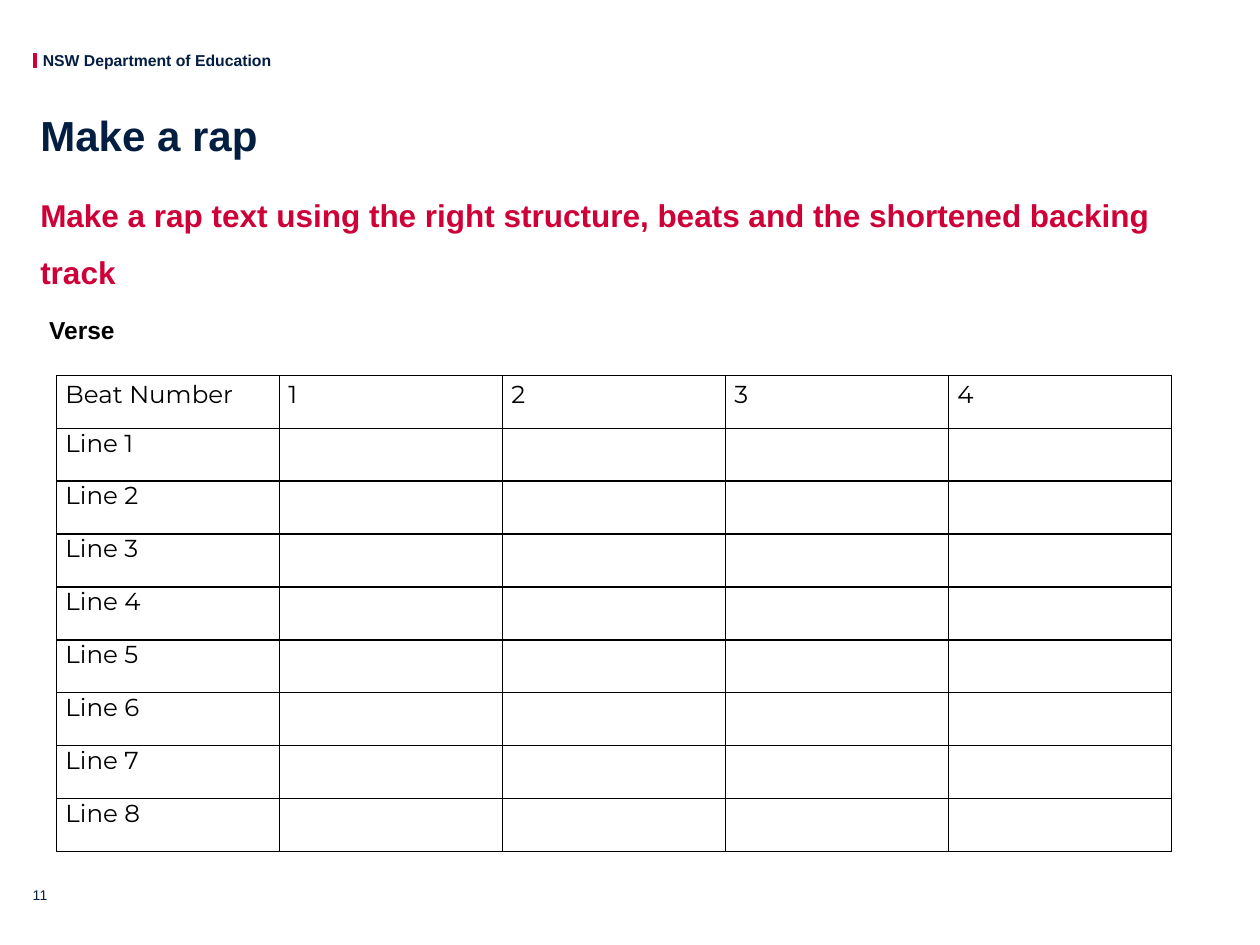
from lxml import etree
from pptx import Presentation
from pptx.dml.color import RGBColor
from pptx.enum.shapes import MSO_CONNECTOR
from pptx.enum.text import MSO_ANCHOR, MSO_AUTO_SIZE, PP_ALIGN
from pptx.oxml import parse_xml
from pptx.oxml.ns import nsdecls, qn
from pptx.util import Inches, Pt

NAVY = RGBColor(0x04, 0x1E, 0x42)
RED = RGBColor(0xCE, 0x00, 0x37)
BLACK = RGBColor(0x00, 0x00, 0x00)
STRAIGHT = MSO_CONNECTOR.STRAIGHT
TOP, MIDDLE, BOTTOM = MSO_ANCHOR.TOP, MSO_ANCHOR.MIDDLE, MSO_ANCHOR.BOTTOM
LEFT = PP_ALIGN.LEFT
NO_AUTOFIT = MSO_AUTO_SIZE.NONE

DEPARTMENT = "NSW Department of Education"
TITLE = "Make a rap"
TASK = "Make a rap text using the right structure, beats and the shortened backing track"
SECTION = "Verse"
PAGE = "11"
BEATS = 4
LINES = 8
ROWS = [["Beat Number"] + [str(n + 1) for n in range(BEATS)]]
ROWS += [[f"Line {n + 1}"] + [""] * BEATS for n in range(LINES)]

SLIDE_W, SLIDE_H = 10, 7.5
MARGIN = 0.32
TEXT_W = 9.43
TABLE_X, TABLE_Y = 0.45, 2.98
COL_W, ROW_H = 1.77, 0.42


def style(p, size, color, bold=False, font="Arial"):
    p.font.name = font
    p.font.size = Pt(size)
    p.font.bold = bold
    p.font.color.rgb = color


def fill_text(sp, text, size, color, bold=False, anchor=TOP, wrap=True, insets=(0, 0, 0, 0)):
    tf = sp.text_frame
    tf.text = text
    tf.auto_size = NO_AUTOFIT
    tf.word_wrap = wrap
    tf.vertical_anchor = anchor
    tf.margin_left, tf.margin_top, tf.margin_right, tf.margin_bottom = map(Inches, insets)
    p = tf.paragraphs[0]
    p.alignment = LEFT
    style(p, size, color, bold)
    return p


def add_text(s, box, *args, **options):
    return fill_text(s.shapes.add_textbox(*map(Inches, box)), *args, **options)


def add_borders(cell):
    tc_pr = cell._tc.get_or_add_tcPr()
    for i, side in enumerate(("lnL", "lnR", "lnT", "lnB")):
        tc_pr.insert(i, parse_xml(
            f'<a:{side} {nsdecls("a")} w="{Pt(1)}"><a:solidFill>'
            f'<a:srgbClr val="{BLACK}"/></a:solidFill></a:{side}>'))


def add_beat_table(s):
    cols = len(ROWS[0])
    box = (TABLE_X, TABLE_Y, COL_W * cols, ROW_H * len(ROWS))
    table = s.shapes.add_table(len(ROWS), cols, *map(Inches, box)).table
    table.horz_banding = False
    table.first_row = False
    for r, row in enumerate(ROWS):
        for c, text in enumerate(row):
            cell = table.cell(r, c)
            cell.text = text
            cell.margin_left = cell.margin_right = Inches(0.07)
            cell.margin_top = cell.margin_bottom = 0
            cell.fill.background()
            add_borders(cell)
            p = cell.text_frame.paragraphs[0]
            if r == 0:
                p.line_spacing = 1.15
                p.space_after = Pt(9.6)
            style(p, 14, BLACK, font="Montserrat")


def main():
    prs = Presentation()
    prs.slide_width, prs.slide_height = Inches(SLIDE_W), Inches(SLIDE_H)
    s = prs.slides.add_slide(prs.slide_layouts[5])

    bar = s.shapes.add_connector(STRAIGHT, *map(Inches, (0.28, 0.42, 0.28, 0.54)))
    bar.line.color.rgb = RED
    bar.line.width = Pt(2.5)
    etree.SubElement(bar._element.spPr, qn("a:effectLst"))
    add_text(s, (0.34, 0.4, 1.83, 0.15), DEPARTMENT, 9, NAVY, True, wrap=False)

    title = s.shapes.title
    title.left, title.top, title.width, title.height = map(Inches, (MARGIN, 0.82, TEXT_W, 0.55))
    fill_text(title, TITLE, 24, NAVY, True, MIDDLE).line_spacing = 0.9

    task = add_text(s, (MARGIN, 1.36, TEXT_W, 0.82), TASK, 18, RED, True,
                    insets=(0, 0.05, 0.1, 0.05))
    task.line_spacing = 1.5
    task.space_after = Pt(4.5)

    add_text(s, (0.26, 6.77, 0.28, 0.4), PAGE, 8, NAVY, anchor=BOTTOM)
    add_beat_table(s)
    add_text(s, (0.39, 2.5, 3, 0.47), SECTION, 14, BLACK, True)
    prs.save("out.pptx")


if __name__ == "__main__":
    main()
